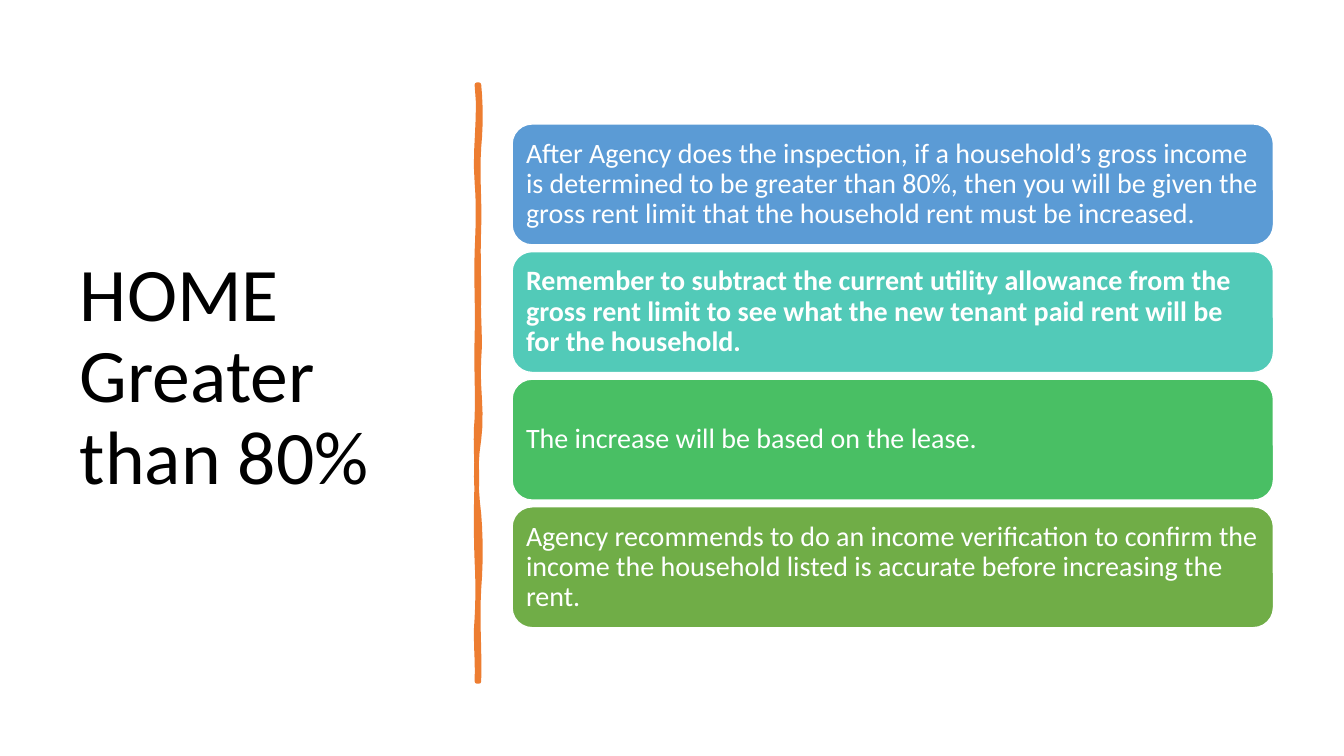
from pptx import Presentation
from pptx.dml.color import RGBColor
from pptx.enum.shapes import MSO_SHAPE
from pptx.enum.text import MSO_ANCHOR, MSO_AUTO_SIZE, PP_ALIGN
from pptx.oxml.ns import qn
from pptx.util import Inches, Pt
from lxml.etree import SubElement

WIDE, HIGH = Inches(13.33), Inches(7.5)
STEPS = 6
CARDS = [
    ("5B9BD5", False, "After Agency does the inspection, if a household’s gross income is "
     "determined to be greater than 80%, then you will be given the gross rent limit "
     "that the household rent must be increased."),
    ("52CAB8", True, "Remember to subtract the current utility allowance from the gross "
     "rent limit to see what the new tenant paid rent will be for the household."),
    ("49BF64", False, "The increase will be based on the lease."),
    ("70AD47", False, "Agency recommends to do an income verification to confirm the income "
     "the household listed is accurate before increasing the rent."),
]
RIGHT = (4.75, [0.84, 1.46, 2.26, 2.94, 3.56, 4.36, 5.1, 5.84, 6.76],
         [(2, 2), (-2, 1), (-1, 0), (-1, 2), (-2, 4), (-4, -3), (2, 2), (-2, 1)])
LEFT = (4.73, [6.76, 6.13, 5.57, 4.77, 4.15, 3.35, 2.5, 1.81, 0.84],
        [(1, -2), (1, 1), (-1, -1), (0, -2), (1, -1), (1, -1), (1, 2), (-3, 4)])


def paint(part, color):
    """Give a fill or a line one solid colour."""
    part.solid()
    part.fore_color.rgb = RGBColor.from_string(color)


def place(shape, left, top, width, height):
    """Set a shape's box in percent of the slide."""
    shape.left, shape.width = (int(WIDE * x / 100) for x in (left, width))
    shape.top, shape.height = (int(HIGH * y / 100) for y in (top, height))


def write(shape, text, size=20, color="FFFFFF", bold=False, inset=None):
    """Put left-aligned, vertically centred text in a shape."""
    frame = shape.text_frame
    frame.word_wrap = True
    frame.auto_size = MSO_AUTO_SIZE.NONE
    frame.vertical_anchor = MSO_ANCHOR.MIDDLE
    if inset is not None:
        frame.margin_left = frame.margin_right = Inches(inset)
        frame.margin_top = frame.margin_bottom = Inches(inset)
    para = frame.paragraphs[0]
    para.alignment = PP_ALIGN.LEFT
    para.line_spacing = 0.9
    run = para.add_run()
    run.text = text
    run.font.name, run.font.size, run.font.bold = "Calibri", Pt(size), bold
    paint(run.font.fill, color)


def card(slide, row, color, bold, text):
    """Add one rounded card in its row of the column."""
    shape = slide.shapes.add_shape(MSO_SHAPE.ROUNDED_RECTANGLE, 0, 0, 0, 0)
    place(shape, 38.1, 16.4 + row * 16.88, 56.65, 16)
    shape.shadow.inherit = False
    paint(shape.fill, color)
    paint(shape.line.fill, "FFFFFF")
    shape.line.width = Pt(1)
    write(shape, text, bold=bold, inset=0.08)


def edge(base, knots, bends):
    """List the points along one wavy side of the divider."""
    points = []
    for top, end, (near, far) in zip(knots, knots[1:], bends):
        for step in range(STEPS + 1):
            t = step / STEPS
            sway = 3 * t * (1 - t) * ((1 - t) * near + t * far) / 100
            points.append((Inches(base + sway), Inches(top + (end - top) * t)))
    return points


def wave(slide, color):
    """Draw the hand-drawn upright divider."""
    first, *rest = edge(*RIGHT) + edge(*LEFT)
    pen = slide.shapes.build_freeform(*first)
    pen.add_line_segments(rest, close=True)
    shape = pen.convert_to_shape()
    shape.shadow.inherit = False
    paint(shape.fill, color)
    paint(shape.line.fill, color)
    shape.line.width = Pt(3.25)
    SubElement(shape.element.spPr.find(qn("a:ln")), qn("a:round"))


def main():
    """Build the slide and save it."""
    deck = Presentation()
    deck.slide_width, deck.slide_height = WIDE, HIGH
    slide = deck.slides.add_slide(deck.slide_layouts[5])
    paint(slide.background.fill, "FFFFFF")
    title = slide.shapes.title
    place(title, 5.2, 9.33, 28.05, 81.47)
    write(title, "HOME Greater than 80%", size=54, color="000000")
    wave(slide, "ED7D31")
    for row, item in enumerate(CARDS):
        card(slide, row, *item)
    deck.save("out.pptx")


if __name__ == "__main__":
    main()
